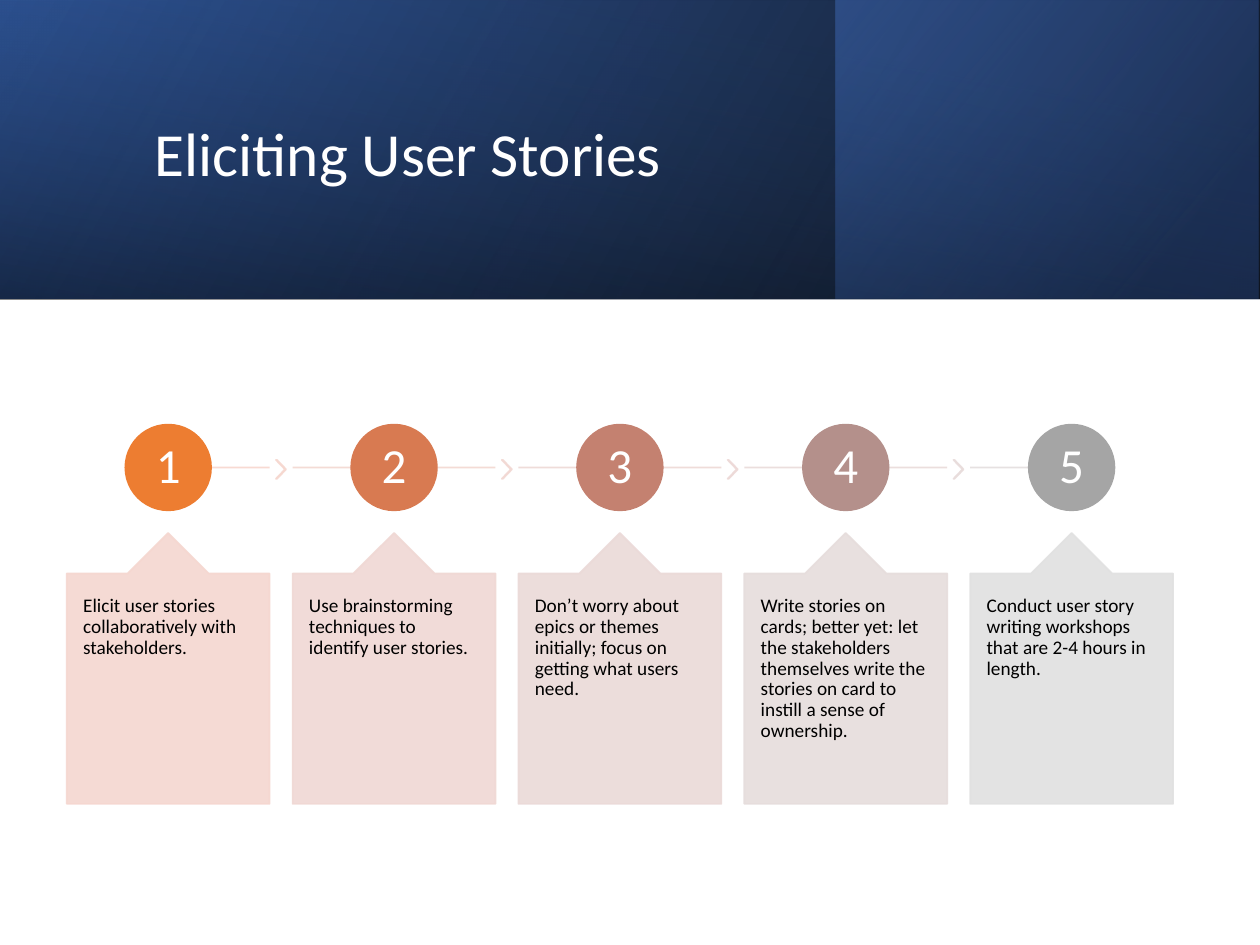
from typing import NamedTuple

from lxml.etree import SubElement
from pptx import Presentation
from pptx.dml.color import RGBColor
from pptx.enum.shapes import MSO_CONNECTOR as Link, MSO_SHAPE as Kind
from pptx.enum.text import MSO_ANCHOR as Anchor, PP_ALIGN as Align
from pptx.oxml.ns import qn
from pptx.util import Inches, Pt

COLORS = {"white": "FFFFFF", "black": "000000", "blue": "2F5597",
          "navy": "203864", "sky": "4472C4"}
FONT = "Calibri"
LEFT, PITCH, WIDE = 0.53, 7.17 / 4, 1.61
DOT, DOT_TOP = 0.68, 3.37
LINE_Y = DOT_TOP + DOT / 2


class Stop(NamedTuple):
    pos: float
    color: str
    alpha: int


class Band(NamedTuple):
    box: tuple[float, float, float, float]
    angle: int
    stops: tuple[Stop, Stop]
    turn: int = 0


class Step(NamedTuple):
    text: str
    dot: str
    line: str
    arrow: str
    card: str


BANDS = [
    Band((0, 0, 10, 2.37), 30,
         (Stop(0, "black", 96), Stop(1, "blue", 100))),
    Band((6.63, 0, 3.36, 2.37), 40,
         (Stop(0.19, "navy", 68), Stop(1, "sky", 48))),
    Band((3.81, -3.81, 2.37, 10), 10,
         (Stop(0.23, "blue", 16), Stop(0.99, "black", 45)), 270),
]
STEPS = [
    Step("Elicit user stories collaboratively with stakeholders.",
         "ED7D31", "F8D7CE", "F6D7CF", "F5D7D0"),
    Step("Use brainstorming techniques to identify user stories.",
         "D87A51", "F3D8D1", "F2D8D3", "F0D8D4"),
    Step("Don’t worry about epics or themes initially; focus on getting "
         "what users need.",
         "C48170", "EED9D5", "EDD9D7", "EBDAD8"),
    Step("Write stories on cards; better yet: let the stakeholders themselves "
         "write the stories on card to instill a sense of ownership.",
         "B4908B", "E9DBDA", "E8DCDB", "E6DDDC"),
    Step("Conduct user story writing workshops that are 2-4 hours in length.",
         "A5A5A5", "E4DEDE", "", "E1E1E1"),
]


def rgb(name: str) -> RGBColor:
    return RGBColor.from_string(COLORS.get(name, name))


def fade(shape, *alphas: int) -> None:
    """Give the shape's colours, in order, their opacity in percent."""
    for tint, alpha in zip(shape.element.spPr.iter(qn("a:srgbClr")), alphas):
        SubElement(tint, qn("a:alpha")).set("val", str(alpha * 1000))


def add_form(slide, kind: Kind, box: tuple):
    shape = slide.shapes.add_shape(kind, *map(Inches, box))
    shape.shadow.inherit = False
    return shape


def paint(shape, color: str) -> None:
    shape.fill.solid()
    shape.fill.fore_color.rgb = rgb(color)
    shape.line.color.rgb = rgb(color)
    shape.line.width = Pt(1)


def write(shape, text: str, size: int, color: str, align: Align,
          anchor: Anchor, pad: tuple[float, float]) -> None:
    """Fill the shape with one paragraph; pad is the side and end inset."""
    frame = shape.text_frame
    frame.word_wrap = True
    frame.vertical_anchor = anchor
    frame.margin_left = frame.margin_right = Inches(pad[0])
    frame.margin_top = frame.margin_bottom = Inches(pad[1])
    para = frame.paragraphs[0]
    para.alignment = align
    para.line_spacing = 0.9
    run = para.add_run()
    run.text = text
    run.font.name = FONT
    run.font.size = Pt(size)
    run.font.color.rgb = rgb(color)


def add_band(slide, band: Band) -> None:
    shape = add_form(slide, Kind.RECTANGLE, band.box)
    shape.line.fill.background()
    shape.rotation = band.turn
    shape.element.spPr.find(qn("a:xfrm")).set("flipH", "1")
    shape.fill.gradient()
    shape.fill.gradient_angle = band.angle
    for mark, stop in zip(shape.fill.gradient_stops, band.stops):
        mark.color.rgb = rgb(stop.color)
        mark.position = stop.pos
    fade(shape, *(stop.alpha for stop in band.stops))


def add_line(slide, start: float, end: float, color: str) -> None:
    line = slide.shapes.add_connector(
        Link.STRAIGHT, *map(Inches, (start, LINE_Y, end, LINE_Y)))
    line.line.color.rgb = rgb(color)
    line.line.width = Pt(1)
    fade(line, 90)
    SubElement(line.element.spPr, qn("a:effectLst"))


def add_step(slide, index: int, step: Step) -> None:
    left = LEFT + index * PITCH
    mid = left + WIDE / 2
    first, last = index == 0, index == len(STEPS) - 1
    add_line(slide, 1.43 if first else left,
             mid if last else left + WIDE, step.line)
    if not last:
        arrow = add_form(slide, Kind.CHEVRON,
                         (left + WIDE + 0.05, 3.65, 0.08, 0.15))
        arrow.adjustments[0] = 0.9
        paint(arrow, step.arrow)
        fade(arrow, 90, 90)

    dot = add_form(slide, Kind.OVAL, (mid - DOT / 2, DOT_TOP, DOT, DOT))
    paint(dot, step.dot)
    write(dot, str(index + 1), 28, "white", Align.CENTER, Anchor.MIDDLE,
          (0.03, 0.03))

    card = add_form(slide, Kind.UP_ARROW_CALLOUT, (left, 4.23, WIDE, 2.15))
    for spot, value in enumerate((0.5, 0.2, 0.2, 1)):
        card.adjustments[spot] = value
    paint(card, step.card)
    fade(card, 90, 90)
    write(card, step.text, 11, "black", Align.LEFT, Anchor.TOP, (0.13, 0.18))


def main() -> None:
    deck = Presentation()
    deck.slide_width, deck.slide_height = Inches(10), Inches(7.5)
    slide = deck.slides.add_slide(deck.slide_layouts[5])
    for band in BANDS:
        add_band(slide, band)

    title = slide.shapes.title
    title.left, title.top = Inches(1.13), Inches(0.38)
    title.width, title.height = Inches(7.97), Inches(1.72)
    write(title, "Eliciting User Stories", 35, "white", Align.LEFT,
          Anchor.MIDDLE, (0.1, 0.05))
    # Bring the title in front of the bands
    title.element.getparent().append(title.element)

    for index, step in enumerate(STEPS):
        add_step(slide, index, step)
    deck.save("out.pptx")


if __name__ == "__main__":
    main()
